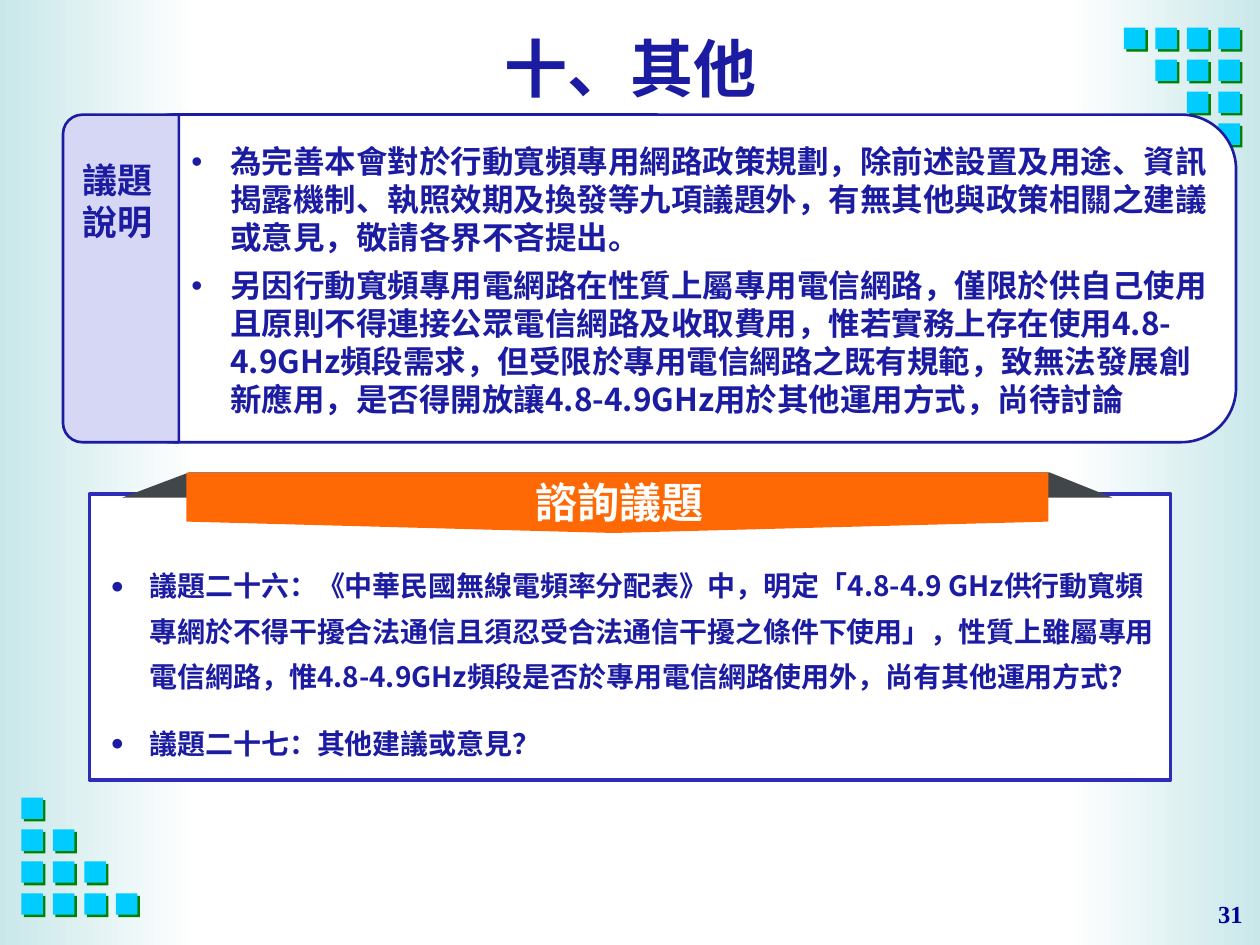
import dataclasses

import lxml.etree
import pptx
import pptx.dml.color
import pptx.enum.shapes
import pptx.enum.text
import pptx.oxml.ns
import pptx.util

Inches = pptx.util.Inches
SHAPE = pptx.enum.shapes.MSO_SHAPE
ALIGN = pptx.enum.text.PP_ALIGN
ANCHOR = pptx.enum.text.MSO_ANCHOR


@dataclasses.dataclass(frozen=True)
class Theme:
    font: str = "Noto Sans CJK SC"
    num_font: str = "Times New Roman"
    ink: str = "1C1CA2"
    num_ink: str = "000099"
    white: str = "FFFFFF"
    mist: str = "C9E7E9"
    tile: str = "00CCFF"
    shade: str = "008000"
    tab: str = "D6D6F5"
    frame: str = "2D2DB9"
    fold: str = "41464A"
    ribbon: str = "FE6906"
    title: int = 36
    head: int = 24
    label: int = 20
    body: int = 18
    issue: int = 16
    number: int = 14


def rgb(code):
    return pptx.dml.color.RGBColor.from_string(code)


def add_tag(parent, tag, **attrs):
    return lxml.etree.SubElement(parent, pptx.oxml.ns.qn(tag), **attrs)


class Page:
    """Holds the theme and the slide being drawn."""

    def __init__(self, slide, theme):
        self.slide = slide
        self.theme = theme

    def paint(self, shape, fill, line=None, width=1.5):
        shape.shadow.inherit = False
        if fill:
            shape.fill.solid()
            shape.fill.fore_color.rgb = rgb(fill)
        if line:
            shape.line.color.rgb = rgb(line)
            shape.line.width = pptx.util.Pt(width)
        else:
            shape.line.fill.background()
        return shape

    def shape(self, kind, box, fill, line=None, width=1.5):
        item = self.slide.shapes.add_shape(kind, *map(Inches, box))
        return self.paint(item, fill, line, width)

    def fade(self, box, left, right):
        item = self.shape(SHAPE.RECTANGLE, box, None)
        item.fill.gradient()
        item.fill.gradient_angle = 0
        for stop, code in zip(item.fill.gradient_stops, (left, right)):
            stop.color.rgb = rgb(code)

    def outline(self, points, fill):
        first, *rest = [(Inches(x), Inches(y)) for x, y in points]
        pen = self.slide.shapes.build_freeform(*first, scale=1.0)
        pen.add_line_segments(rest, close=True)
        self.paint(pen.convert_to_shape(), fill)

    def tiles(self, left, top, cells):
        """Draw shaded squares at (column, row) cells of a grid."""
        step_x, step_y, size, drop = 0.25, 0.76 / 3, 0.17, 0.02
        for col, row in cells:
            x, y = left + col * step_x, top + row * step_y
            for shift, fill in ((drop, self.theme.shade), (0, self.theme.tile)):
                self.shape(SHAPE.RECTANGLE, (x + shift, y + shift, size, size), fill)

    def style(self, frame, size, color, font=None):
        font = font or self.theme.font
        for para in frame.paragraphs:
            for run in para.runs:
                run.font.size = pptx.util.Pt(size)
                run.font.bold = True
                run.font.color.rgb = rgb(color)
                run.font.name = font
                add_tag(run._r.get_or_add_rPr(), "a:ea", typeface=font)

    def title(self, text, box):
        item = self.slide.shapes.title
        item.left, item.top, item.width, item.height = map(Inches, box)
        frame = item.text_frame
        frame.text = text
        frame.vertical_anchor = ANCHOR.MIDDLE
        frame.paragraphs[0].alignment = ALIGN.CENTER
        self.style(frame, self.theme.title, self.theme.ink)

    def text(self, text, box, size, color, wrap=True, font=None):
        frame = self.slide.shapes.add_textbox(*map(Inches, box)).text_frame
        frame.text = text
        frame.word_wrap = wrap
        self.style(frame, size, color, font)
        return frame

    def bullets(self, items, box, size, mark, indent, scale=100, pitch=None, after=0):
        frame = self.text("\n".join(items), box, size, self.theme.ink)
        for order, para in enumerate(frame.paragraphs):
            props = para._p.get_or_add_pPr()
            props.set("marL", str(Inches(indent)))
            props.set("indent", str(Inches(-0.31)))
            color = add_tag(props, "a:buClr")
            add_tag(color, "a:srgbClr", val=self.theme.ink)
            add_tag(props, "a:buSzPct", val=str(scale * 1000))
            add_tag(props, "a:buFont", typeface="Arial")
            add_tag(props, "a:buChar", char=mark)
            para.space_before = pptx.util.Pt(6 if order else 0)
            para.space_after = pptx.util.Pt(after)
            if pitch:
                para.line_spacing = pptx.util.Pt(pitch)


def main():
    deck = pptx.Presentation()
    deck.slide_width, deck.slide_height = Inches(10), Inches(7.5)
    theme = Theme()
    page = Page(deck.slides.add_slide(deck.slide_layouts[5]), theme)

    # Side bands and corner tiles
    page.fade((8.47, 0, 1.53, 7.5), theme.white, theme.mist)
    page.fade((0, 0, 1.57, 7.5), theme.mist, theme.white)
    steps = [(col, row) for col in range(4) for row in range(col, 4)]
    page.tiles(0.17, 6.33, steps)
    page.tiles(8.92, 0.22, [(row, col) for col, row in steps])
    number = page.text("31", (7.88, 7.13, 2.08, 0.25), theme.number,
                       theme.num_ink, font=theme.num_font)
    number.vertical_anchor = ANCHOR.MIDDLE
    number.paragraphs[0].alignment = ALIGN.RIGHT

    page.title("十、其他", (0, 0, 10, 1.07))

    # Topic card
    page.shape(SHAPE.ROUNDED_RECTANGLE, (0.94, 0.91, 8.87, 2.6), theme.white, theme.ink)
    tab = page.shape(SHAPE.ROUND_2_SAME_RECTANGLE, (-0.34, 1.75, 2.6, 0.92),
                     theme.tab, theme.ink)
    tab.rotation = 270
    page.text("議題\n說明", (0.56, 1.21, 0.8, 0.77), theme.label, theme.ink, wrap=False)
    page.bullets([
        "為完善本會對於行動寬頻專用網路政策規劃，除前述設置及用途、資訊揭露機制、"
        "執照效期及換發等九項議題外，有無其他與政策相關之建議或意見，敬請各界不吝提出。",
        "另因行動寬頻專用電網路在性質上屬專用電信網路，僅限於供自己使用且原則不得連接"
        "公眾電信網路及收取費用，惟若實務上存在使用4.8-4.9GHz頻段需求，但受限於專用電信"
        "網路之既有規範，致無法發展創新應用，是否得開放讓4.8-4.9GHz用於其他運用方式，"
        "尚待討論",
    ], (1.42, 1.08, 8.28, 2.31), theme.body, "•", 0.31)

    # Consultation box with ribbon
    page.shape(SHAPE.RECTANGLE, (0.71, 3.92, 8.58, 2.27), theme.white, theme.frame, 2)
    page.outline([(1.5, 3.75), (8.33, 3.75), (8.83, 3.95), (0.97, 3.95)], theme.fold)
    page.outline([(1.48, 3.75), (8.32, 3.75), (8.32, 4.14), (4.87, 4.23), (1.48, 4.14)],
                 theme.ribbon)
    page.text("諮詢議題", (4.15, 3.73, 1.55, 0.5), theme.head, theme.white, wrap=False)
    page.bullets([
        "議題二十六：《中華民國無線電頻率分配表》中，明定「4.8-4.9 GHz供行動寬頻專網於"
        "不得干擾合法通信且須忍受合法通信干擾之條件下使用」，性質上雖屬專用電信網路，"
        "惟4.8-4.9GHz頻段是否於專用電信網路使用外，尚有其他運用方式？",
        "議題二十七：其他建議或意見？",
    ], (0.28, 4.37, 9.06, 3.13), theme.issue, "●", 0.81, scale=80, pitch=26, after=6)

    deck.save("out.pptx")


if __name__ == "__main__":
    main()
